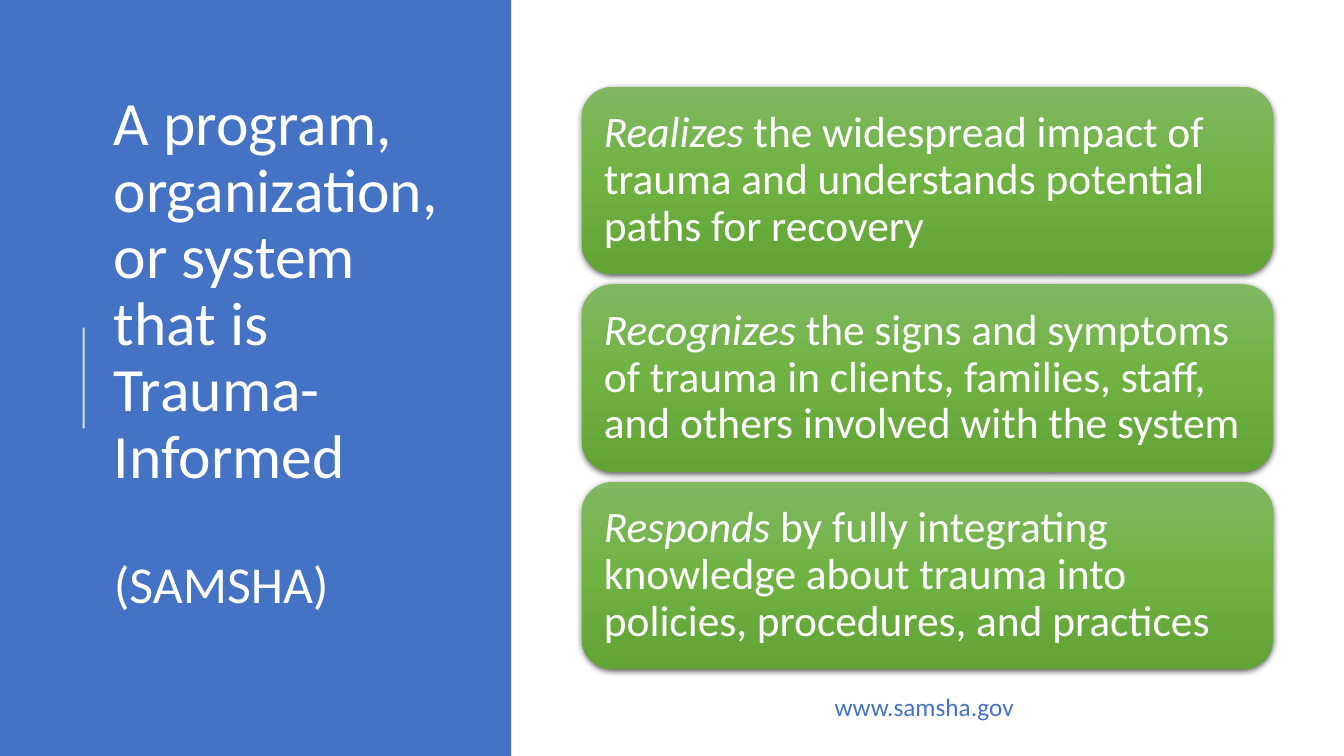
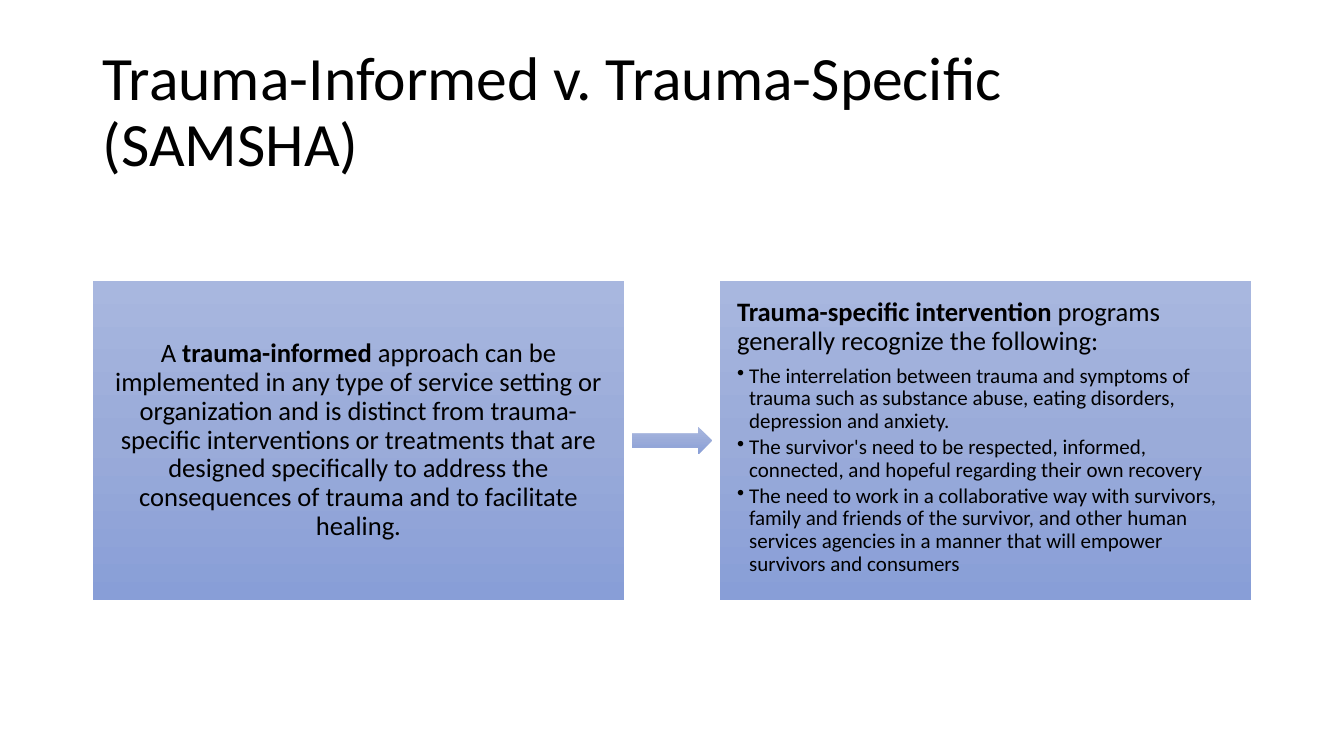
"""Two slides on trauma-informed programs and trauma-specific interventions."""
from lxml.etree import SubElement
from pptx import Presentation
from pptx.dml.color import RGBColor
from pptx.enum.shapes import MSO_CONNECTOR, MSO_SHAPE
from pptx.enum.text import MSO_ANCHOR, PP_ALIGN
from pptx.oxml import parse_xml
from pptx.oxml.ns import nsdecls, qn
from pptx.util import Inches, Pt

FONT = "Calibri"
COLORS = {"blue": "4472C4", "white": "FFFFFF", "black": "000000"}
GRADIENTS = {
    "green": ("81B861", "6FB242", "62A336"),
    "lavender": ("A8B7DF", "9AABD9", "889ED7"),
}

PROGRAM_TITLE = [
    {"runs": [("A program, organization, or system that is Trauma-Informed", {})]},
    {"runs": [("(SAMSHA)", {"size": 37})], "before": 48},
]
PROGRAM_STEPS = [
    ("Realizes", " the widespread impact of trauma and understands potential paths for recovery"),
    ("Recognizes", " the signs and symptoms of trauma in clients, families, staff, and others involved with the system"),
    ("Responds", " by fully integrating knowledge about trauma into policies, procedures, and practices"),
]
WEBSITE = "www.samsha.gov"

COMPARISON_TITLE = [{"runs": [("Trauma-Informed v. Trauma-Specific (SAMSHA)", {})]}]
INFORMED = [{"align": PP_ALIGN.CENTER, "runs": [
    ("A ", {}),
    ("trauma-informed", {"bold": True}),
    (" approach can be implemented in any type of service setting or organization and is distinct "
     "from trauma-specific interventions or treatments that are designed specifically to address "
     "the consequences of trauma and to facilitate healing.", {}),
]}]
SPECIFIC_POINTS = [
    "The interrelation between trauma and symptoms of trauma such as substance abuse, "
    "eating disorders, depression and anxiety.",
    "The survivor's need to be respected, informed, connected, and hopeful regarding their own recovery",
    "The need to work in a collaborative way with survivors, family and friends of the survivor, "
    "and other human services agencies in a manner that will empower survivors and consumers",
]
SPECIFIC = [{"after": 6.65, "runs": [
    ("Trauma-specific intervention ", {"bold": True}),
    ("programs generally recognize the following:", {}),
]}] + [{"bullet": True, "after": 2.25, "runs": [(point, {"size": 15})]} for point in SPECIFIC_POINTS]


def rgb(name):
    return RGBColor.from_string(COLORS[name])


def write(sp, paragraphs, size, color, inset=(0.1, 0.05, 0.1, 0.05), anchor=MSO_ANCHOR.MIDDLE, wrap=True):
    tf = sp.text_frame
    frame = dict(zip(("margin_left", "margin_top", "margin_right", "margin_bottom"), map(Inches, inset)))
    for key, value in {**frame, "word_wrap": wrap, "vertical_anchor": anchor}.items():
        setattr(tf, key, value)
    for i, item in enumerate(paragraphs):
        p = tf.add_paragraph() if i else tf.paragraphs[0]
        p.alignment = item.get("align", PP_ALIGN.LEFT)
        p.line_spacing = item.get("spacing", 0.9)
        p.space_before = Pt(item.get("before", 0))
        p.space_after = Pt(item.get("after", 0) if i < len(paragraphs) - 1 else 0)
        if item.get("bullet"):
            pPr = p._p.get_or_add_pPr()
            pPr.set("marL", str(Inches(0.12)))
            pPr.set("indent", str(-Inches(0.12)))
            SubElement(pPr, qn("a:buChar"), char="•")
        for text, style in item["runs"]:
            r = p.add_run()
            r.text = text
            font = {"name": FONT, "size": size, **style}
            font["size"] = Pt(font["size"])
            for key, value in font.items():
                setattr(r.font, key, value)
            r.font.color.rgb = rgb(color)


def add_text(slide, box, paragraphs, size, color, **frame):
    sp = slide.shapes.add_textbox(*map(Inches, box))
    write(sp, paragraphs, size, color, **frame)


def add_title(slide, box, paragraphs, color, **frame):
    add_text(slide, box, paragraphs, 44, color, **frame)


def add_block(slide, kind, box, fill):
    sp = slide.shapes.add_shape(kind, *map(Inches, box))
    sp.shadow.inherit = False
    sp.line.fill.background()
    if fill in COLORS:
        sp.fill.solid()
        sp.fill.fore_color.rgb = rgb(fill)
        return sp
    stops = "".join(f'<a:gs pos="{i * 50000}"><a:srgbClr val="{c}"/></a:gs>'
                    for i, c in enumerate(GRADIENTS[fill]))
    sp._element.spPr.find(qn("a:prstGeom")).addnext(parse_xml(
        f'<a:gradFill {nsdecls("a")} rotWithShape="1"><a:gsLst>{stops}</a:gsLst>'
        '<a:lin ang="5400000" scaled="0"/></a:gradFill>'))
    return sp


def add_shadow(sp):
    sp._element.spPr.find(qn("a:effectLst")).append(parse_xml(
        f'<a:outerShdw {nsdecls("a")} blurRad="{Pt(4.5)}" dist="{Pt(1.5)}" dir="5400000" '
        'algn="ctr" rotWithShape="0"><a:srgbClr val="000000"><a:alpha val="63000"/>'
        '</a:srgbClr></a:outerShdw>'))


def add_rule(slide, x, y1, y2):
    line = slide.shapes.add_connector(MSO_CONNECTOR.STRAIGHT, *map(Inches, (x, y1, x, y2)))
    line.line.width = Pt(1.5)
    line.line.color.rgb = rgb("white")
    spPr = line._element.spPr
    SubElement(spPr.find(".//" + qn("a:srgbClr")), qn("a:alpha"), val="80000")
    SubElement(spPr, qn("a:effectLst"))


def build_program(slide):
    add_block(slide, MSO_SHAPE.RECTANGLE, (0, 0, 5.07, 7.5), "blue")
    add_rule(slide, 0.83, 4.25, 3.25)
    add_title(slide, (1.03, 0.78, 3.69, 6.02), PROGRAM_TITLE, "white", inset=(0.1, 0.05, 0.1, 0.61))
    top, height, gap = 0.86, 1.86, 0.1
    for i, (verb, rest) in enumerate(PROGRAM_STEPS):
        box = (5.77, top + i * (height + gap), 6.86, height)
        sp = add_block(slide, MSO_SHAPE.ROUNDED_RECTANGLE, box, "green")
        add_shadow(sp)
        write(sp, [{"runs": [(verb, {"italic": True}), (rest, {})]}], 31, "white", inset=(0.13,) * 4)
    add_text(slide, (8.18, 6.81, 2, 0.4), [{"spacing": 1, "runs": [(WEBSITE, {})]}], 18, "blue",
             anchor=MSO_ANCHOR.TOP, wrap=False)


def build_comparison(slide):
    add_title(slide, (0.92, 0.4, 11.5, 1.45), COMPARISON_TITLE, "black")
    left, top, width, height, gap = 0.92, 2.79, 5.27, 3.16, 0.95
    arrow_w, arrow_h = 0.79, 0.27
    panels = [(INFORMED, MSO_ANCHOR.MIDDLE), (SPECIFIC, MSO_ANCHOR.TOP)]
    for i, (paragraphs, anchor) in enumerate(panels):
        box = (left + i * (width + gap), top, width, height)
        sp = add_block(slide, MSO_SHAPE.RECTANGLE, box, "lavender")
        write(sp, paragraphs, 19, "black", inset=(0.17,) * 4, anchor=anchor)
    arrow = (left + width + (gap - arrow_w) / 2, top + (height - arrow_h) / 2, arrow_w, arrow_h)
    add_block(slide, MSO_SHAPE.RIGHT_ARROW, arrow, "lavender")


def main():
    prs = Presentation()
    prs.slide_width, prs.slide_height = Inches(13.33), Inches(7.5)
    for build in (build_program, build_comparison):
        build(prs.slides.add_slide(prs.slide_layouts[6]))
    prs.save("out.pptx")


if __name__ == "__main__":
    main()
